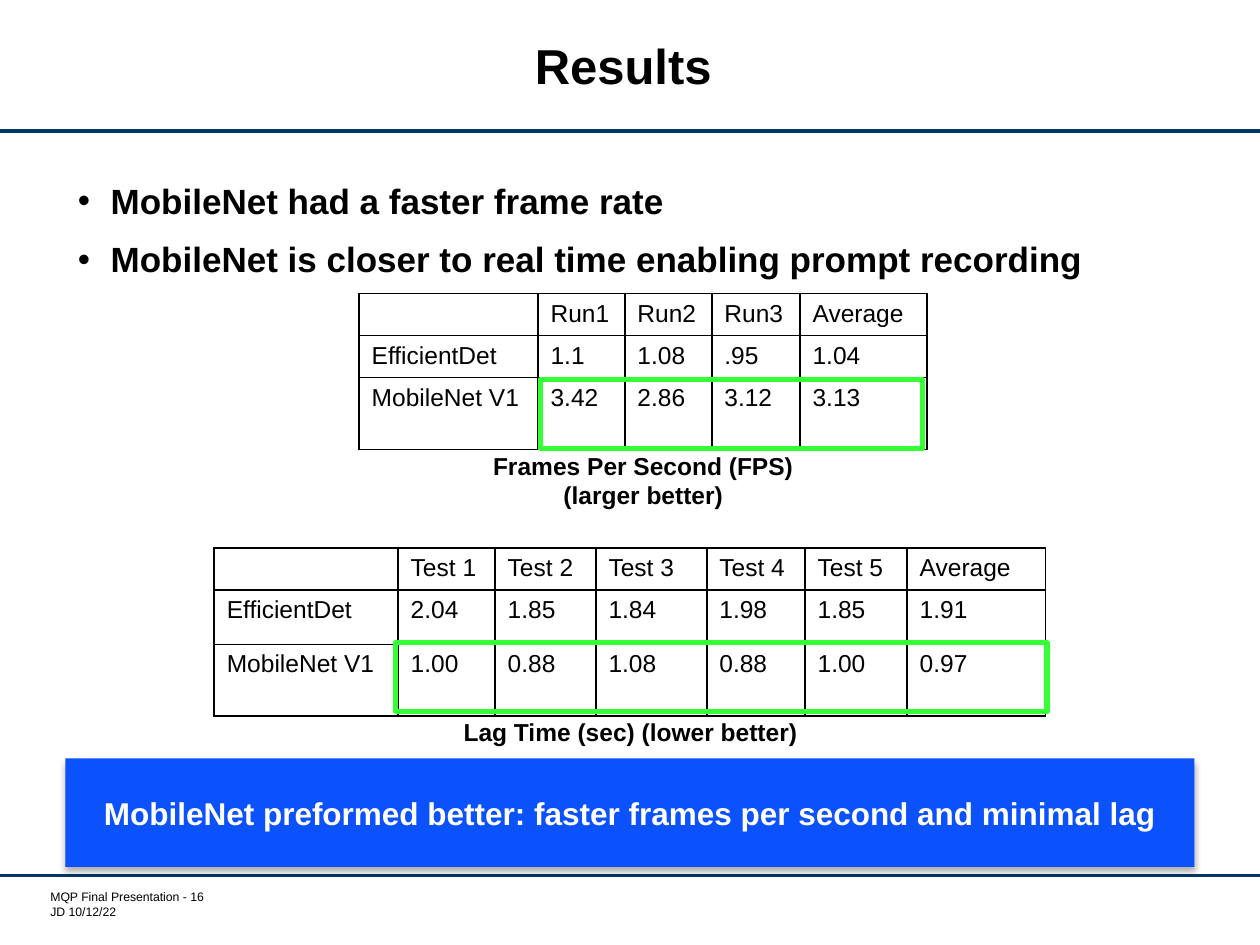
"""Builds the results slide comparing two detection models."""
from collections import namedtuple

from lxml.etree import SubElement
from pptx import Presentation
from pptx.dml.color import RGBColor
from pptx.enum.shapes import MSO_CONNECTOR as Connector, MSO_SHAPE as Shape
from pptx.enum.text import MSO_ANCHOR as Anchor, PP_ALIGN as Align
from pptx.oxml.ns import qn
from pptx.util import Inches, Pt

BLACK = RGBColor(0x00, 0x00, 0x00)
WHITE = RGBColor(0xFF, 0xFF, 0xFF)
NAVY = RGBColor(0x00, 0x37, 0x67)
BLUE = RGBColor(0x0B, 0x52, 0xFC)
GREEN = RGBColor(0x35, 0xFF, 0x35)
FONT = "Arial"
COLUMNS, ROWS = 100, 75
UNIT = Inches(10) // COLUMNS

Box = namedtuple("Box", "left top width height")

FPS_ROWS = [
    ["", "Run1", "Run2", "Run3", "Average"],
    ["EfficientDet", "1.1", "1.08", ".95", "1.04"],
    ["MobileNet V1", "3.42", "2.86", "3.12", "3.13"],
]
LAG_ROWS = [
    ["", "Test 1", "Test 2", "Test 3", "Test 4", "Test 5", "Average"],
    ["EfficientDet", "2.04", "1.85", "1.84", "1.98", "1.85", "1.91"],
    ["MobileNet V1", "1.00", "0.88", "1.08", "0.88", "1.00", "0.97"],
]


def grid(*counts):
    """Turn counts of grid units into lengths."""
    return [round(count * UNIT) for count in counts]


def within(box, part):
    """Shift a part from its region's corner to the slide."""
    return Box(box.left + part.left, box.top + part.top, part.width, part.height)


def add_xml(parent, tag, **attributes):
    """Append a drawing element and return it."""
    return SubElement(parent, qn(tag), attributes)


def write(frame, text, size=14, color=BLACK, bold=False, align=Align.LEFT,
          anchor=Anchor.TOP, spacing=None, before=0, bullet=False, wrap=True):
    """Fill a text frame with one paragraph per line of text."""
    frame.word_wrap = wrap
    frame.vertical_anchor = anchor
    for index, line in enumerate(text.split("\n")):
        paragraph = frame.add_paragraph() if index else frame.paragraphs[0]
        if bullet:
            properties = paragraph._p.get_or_add_pPr()
            properties.set("marL", str(Inches(0.26)))
            properties.set("indent", str(-Inches(0.26)))
            add_xml(properties, "a:buFont", typeface=FONT)
            add_xml(properties, "a:buChar", char="•")
        paragraph.alignment = align
        paragraph.line_spacing = spacing
        paragraph.space_before = Pt(before if index else 0)
        if not line:
            add_xml(paragraph._p, "a:endParaRPr", sz=str(size * 100))
            continue
        run = paragraph.add_run()
        run.text = line
        run.font.name, run.font.size, run.font.bold = FONT, Pt(size), bold
        run.font.color.rgb = color


def add_text(slide, box, text, **style):
    """Add a text box and return its frame."""
    frame = slide.shapes.add_textbox(*grid(*box)).text_frame
    write(frame, text, **style)
    return frame


def add_rectangle(slide, box, fill=None, line=None):
    """Add a rectangle with only the given fill and outline."""
    shape = slide.shapes.add_shape(Shape.RECTANGLE, *grid(*box))
    shape.shadow.inherit = False
    if fill is None:
        shape.fill.background()
    else:
        shape.fill.solid()
        shape.fill.fore_color.rgb = fill
    if line is None:
        shape.line.fill.background()
    else:
        shape.line.color.rgb = line
        shape.line.width = Pt(3)
    return shape


def add_rule(slide, top):
    """Draw a navy rule across the slide."""
    rule = slide.shapes.add_connector(
        Connector.STRAIGHT, *grid(0, top, COLUMNS, top))
    rule.line.color.rgb = NAVY
    rule.line.width = Pt(1.75)
    add_xml(rule._element.spPr, "a:effectLst")


def add_title(slide, box, text):
    """Place and format the title placeholder."""
    title = slide.shapes.title
    title.left, title.top, title.width, title.height = grid(*box)
    write(title.text_frame, text, size=28, bold=True, align=Align.CENTER,
          anchor=Anchor.MIDDLE, spacing=Pt(28))


def add_footer(slide, box, text):
    """Add the small footer lines."""
    frame = add_text(slide, box, text, size=7, wrap=False)
    frame.margin_left = Inches(0.05)
    frame.margin_top = frame.margin_right = frame.margin_bottom = 0


def format_cell(cell, text):
    """Write a cell and give it thin black borders."""
    write(cell.text_frame, text)
    properties = cell._tc.get_or_add_tcPr()
    for side in ("a:lnL", "a:lnR", "a:lnT", "a:lnB"):
        border = add_xml(properties, side, w=str(Pt(1)))
        fill = add_xml(border, "a:solidFill")
        add_xml(fill, "a:srgbClr", val=str(BLACK))
    cell.fill.background()


def add_results(slide, box, rows, widths, heights, highlight, caption, caption_box):
    """Add a bordered table with its highlight and caption."""
    add_text(slide, within(box, caption_box), caption, bold=True, align=Align.CENTER)
    table = slide.shapes.add_table(len(rows), len(widths), *grid(*box)).table
    table.first_row = table.horz_banding = False
    for column, width in zip(table.columns, grid(*widths)):
        column.width = width
    for row, height, texts in zip(table.rows, grid(*heights), rows):
        row.height = height
        for cell, text in zip(row.cells, texts):
            format_cell(cell, text)
    add_rectangle(slide, within(box, highlight), line=GREEN)


def add_banner(slide, box, text):
    """Add the blue conclusion banner with a soft shadow below."""
    banner = add_rectangle(slide, box, fill=BLUE)
    effects = banner._element.spPr.find(qn("a:effectLst"))
    shadow = add_xml(effects, "a:outerShdw", blurRad=str(Pt(3.5)),
                     dist=str(Pt(2.2)), dir="5400000", rotWithShape="0")
    color = add_xml(shadow, "a:srgbClr", val=str(BLACK))
    add_xml(color, "a:alpha", val="32000")
    write(banner.text_frame, text, size=18, color=WHITE, bold=True,
          align=Align.CENTER, anchor=Anchor.MIDDLE)


def main():
    """Build and save the presentation."""
    presentation = Presentation()
    presentation.slide_width, presentation.slide_height = grid(COLUMNS, ROWS)
    slide = presentation.slides.add_slide(presentation.slide_layouts[5])
    for top in (10.4, 69.5):
        add_rule(slide, top)
    add_footer(slide, Box(3.5, 70.6, 13.9, 2.4),
               "MQP Final Presentation - 16\nJD 10/12/22")
    add_text(slide, Box(5.2, 14.1, 89.6, 52.8),
             "MobileNet had a faster frame rate\n"
             "MobileNet is closer to real time enabling prompt recording",
             size=20, bold=True, spacing=0.9, before=12, bullet=True)
    add_title(slide, Box(10.3, 1.1, 79.4, 8.9), "Results ")
    add_results(slide, Box(28.5, 23.3, 45.1, 12.3), FPS_ROWS,
                [14.2, 6.9, 6.9, 7, 10.1], [3.3, 3.3, 5.7],
                Box(14.4, 6.8, 30.3, 5.5),
                "Frames Per Second (FPS) (larger better)", Box(8.6, 12, 27.9, 5.7))
    add_results(slide, Box(17, 43.5, 66.1, 13.3), LAG_ROWS,
                [14.6, 7.7, 8, 8.8, 7.8, 8.1, 11], [3.3, 4.3, 5.7],
                Box(14.4, 7.5, 51.7, 5.5),
                "Lag Time (sec) (lower better)", Box(17.2, 12.9, 31.7, 3.5))
    add_banner(slide, Box(5.2, 60.2, 89.6, 8.6),
               "MobileNet preformed better: faster frames per second and minimal lag")
    presentation.save("out.pptx")


if __name__ == "__main__":
    main()
